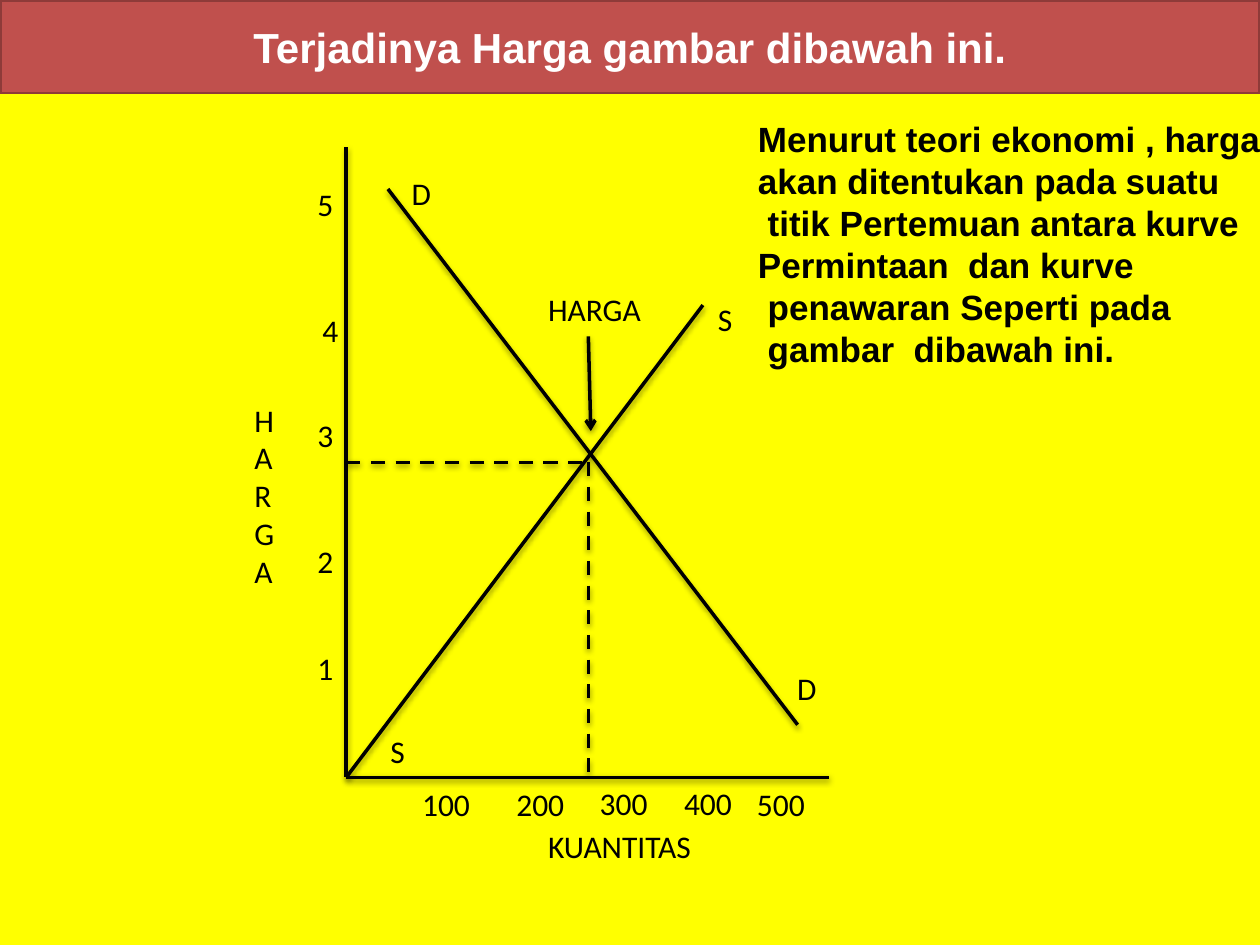
"""Build a slide that explains how price forms where demand meets supply."""
from lxml import etree
from pptx import Presentation
from pptx import util as u
from pptx.dml.color import RGBColor
from pptx.enum import dml, shapes, text
from pptx.oxml import ns

BLACK, WHITE, RED, DARK_RED, YELLOW = "000000", "FFFFFF", "C0504D", "8E3B39", "FFFF00"
TITLE = "Terjadinya Harga gambar dibawah ini."
THEORY = [
    "Menurut teori ekonomi , harga",
    "akan ditentukan pada suatu",
    " titik Pertemuan antara kurve",
    "Permintaan  dan kurve",
    " penawaran Seperti pada",
    " gambar  dibawah ini.",
]

ORIGIN = (6.98, 15.67)
BALANCE = (11.86, 9.32)
SOLID = [
    ((ORIGIN[0], 2.97), ORIGIN),
    ((16.71, ORIGIN[1]), ORIGIN),
    ((14.17, 6.15), ORIGIN),
    ((7.82, 3.81), (16.08, 14.61)),
]
DASHED = [((ORIGIN[0], BALANCE[1]), BALANCE), (BALANCE, (BALANCE[0], ORIGIN[1]))]
ARROW = ((11.86, 6.78), (11.91, 8.69))

PRICES = [("5", 6.15, 3.61), ("4", 6.25, 6.15), ("3", 6.15, 8.26),
          ("2", 6.15, 10.8), ("1", 6.15, 12.95)]
QUANTITIES = [("100", 8.26, 15.7), ("200", 10.16, 15.7), ("300", 11.84, 15.67),
              ("400", 13.54, 15.67), ("500", 15.01, 15.7)]
LABELS = [
    (0.84, PRICES),
    (1.5, QUANTITIES),
    (0.81, [("S", 7.62, 14.63), ("S", 14.22, 5.92)]),
    (0.91, [("D", 8.05, 3.38), ("D", 15.82, 13.36), ("\n".join("HARGA"), 4.88, 7.95)]),
    (2.39, [("HARGA", 10.8, 5.72)]),
    (3.4, [("KUANTITAS", 10.8, 16.54)]),
]


def color(value):
    """Turn a hex string into a colour."""
    return RGBColor.from_string(value)


def style(tf, size, font, ink, bold=False):
    """Format every run of a text frame."""
    for p in tf.paragraphs:
        for r in p.runs:
            r.font.size, r.font.name, r.font.bold = u.Pt(size), font, bold
            r.font.color.rgb = color(ink)


def add_box(s, x, y, w, h, fill):
    """Add a plain filled rectangle."""
    sp = s.shapes.add_shape(shapes.MSO_SHAPE.RECTANGLE, u.Cm(x), u.Cm(y), u.Cm(w), u.Cm(h))
    sp.shadow.inherit = False
    sp.fill.solid()
    sp.fill.fore_color.rgb = color(fill)
    sp.line.fill.background()
    return sp


def add_text(s, words, x, y, w, size, font, bold=False):
    """Add an unwrapped text box sized to its lines."""
    lines = words.count("\n") + 1
    h = 0.25 + lines * size * 0.0424
    tf = s.shapes.add_textbox(u.Cm(x), u.Cm(y), u.Cm(w), u.Cm(h)).text_frame
    tf.text = words
    tf.word_wrap = False
    tf.auto_size = text.MSO_AUTO_SIZE.SHAPE_TO_FIT_TEXT
    style(tf, size, font, BLACK, bold)


def add_line(s, start, end, dashed=False, arrow=False):
    """Add a black line with a soft shadow."""
    ends = [u.Cm(v) for v in start + end]
    sp = s.shapes.add_connector(shapes.MSO_CONNECTOR.STRAIGHT, *ends)
    sp.line.width = u.Pt(2)
    sp.line.color.rgb = color(BLACK)
    if dashed:
        sp.line.dash_style = dml.MSO_LINE.DASH
    if arrow:
        etree.SubElement(sp.line._get_or_add_ln(), ns.qn("a:tailEnd"), type="arrow")
    effects = etree.SubElement(sp._element.spPr, ns.qn("a:effectLst"))
    shadow = etree.SubElement(effects, ns.qn("a:outerShdw"), blurRad="40000",
                              dist="20000", dir="5400000", rotWithShape="0")
    tint = etree.SubElement(shadow, ns.qn("a:srgbClr"), val=BLACK)
    etree.SubElement(tint, ns.qn("a:alpha"), val="38000")


def main():
    """Build and save the slide."""
    prs = Presentation()
    prs.slide_width, prs.slide_height = u.Cm(25.4), u.Cm(19.05)
    s = prs.slides.add_slide(prs.slide_layouts[6])

    title = add_box(s, 0, 0, 25.4, 1.9, RED)
    title.line.color.rgb = color(DARK_RED)
    title.line.width = u.Pt(2)
    tf = title.text_frame
    tf.text = TITLE
    tf.vertical_anchor = text.MSO_ANCHOR.MIDDLE
    tf.paragraphs[0].alignment = text.PP_ALIGN.CENTER
    style(tf, 24, "Arial", WHITE, True)
    add_box(s, 0, 1.9, 25.4, 17.98, YELLOW)

    for start, end in SOLID:
        add_line(s, start, end)
    for start, end in DASHED:
        add_line(s, start, end, dashed=True)
    for width, group in LABELS:
        for words, x, y in group:
            add_text(s, words, x, y, width, 18, "Calibri")
    add_line(s, *ARROW, arrow=True)
    add_text(s, "\n".join(THEORY), 15.03, 2.24, 10.92, 20, "Arial", True)
    prs.save("out.pptx")


if __name__ == "__main__":
    main()
